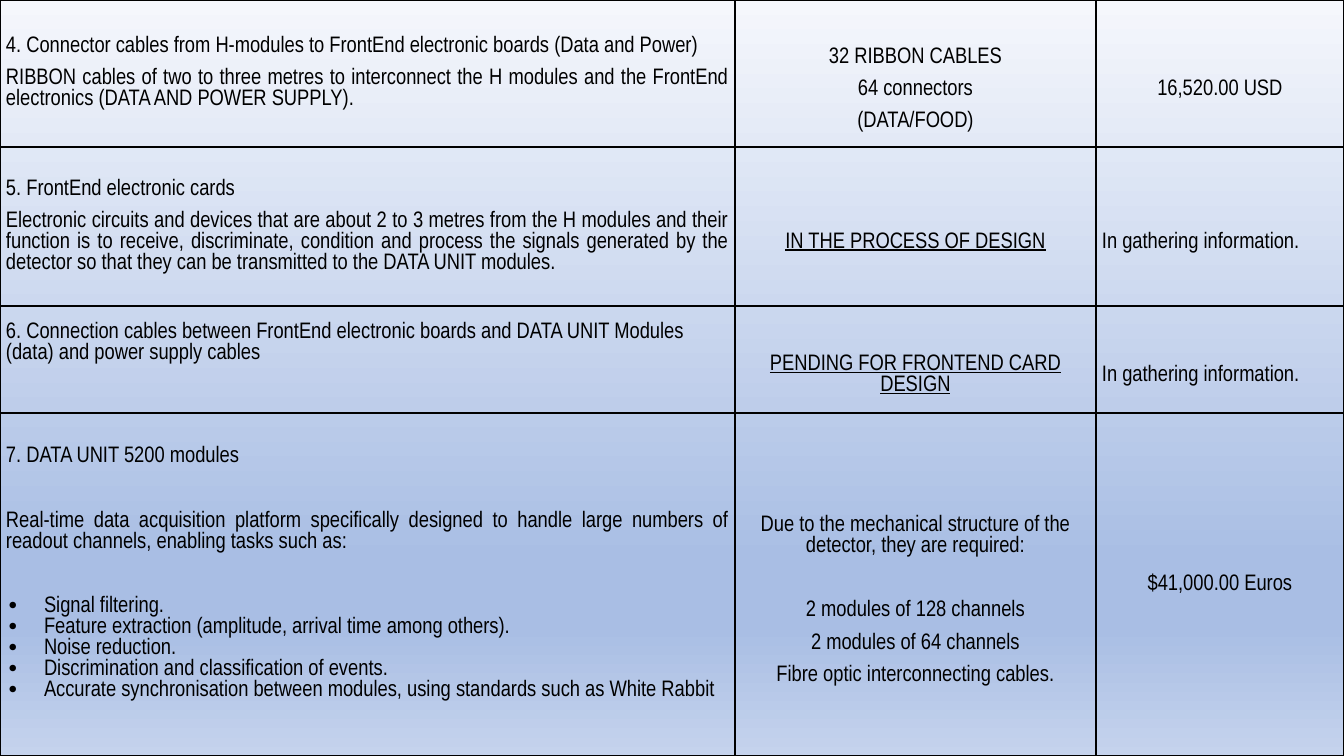
from dataclasses import dataclass, field

from pptx import Presentation
from pptx.dml.color import RGBColor
from pptx.enum.text import MSO_ANCHOR as Anchor, PP_ALIGN as Align
from pptx.oxml import parse_xml
from pptx.oxml.ns import nsdecls
from pptx.util import Emu, Pt

SCALE = 12192000 / 1344
WIDTH, HEIGHT = 1344, 756
COLUMNS = (735, 361, 248)
ROWS = (147, 159, 107, 343)
INSET = 6
LINE = 32
INDENT = 38


@dataclass(frozen=True)
class Theme:
    """Colours and type sizes of the slide."""
    font: str = "Arial Narrow"
    size: int = 16
    ink: str = "000000"
    border: int = 1
    space: int = 8
    gap: int = 31
    gradient: tuple = ((0, "F5F7FC"), (74, "A9BEE4"), (83, "A9BEE4"), (100, "C5D3ED"))


@dataclass
class Entry:
    """Text of one cell with its extra space above and below, in px."""
    paragraphs: list = field(default_factory=list)
    top: int = 0
    bottom: int = 0


THEME = Theme()


def px(length):
    """Turn px into EMU."""
    return Emu(round(length * SCALE))


def line(text, **style):
    """Pair a text with its format."""
    return text, style


def centred(*texts, **style):
    """Make centred paragraphs of one format."""
    return [line(text, align=Align.CENTER, **style) for text in texts]


def bullets(*texts):
    """Make a tight bullet list set off from the paragraph above."""
    return [line(text, bullet=True, before=0 if index else THEME.gap)
            for index, text in enumerate(texts)]


def add_bullet(paragraph):
    """Give a paragraph a hanging dot."""
    properties = paragraph._p.get_or_add_pPr()
    properties.set("marL", str(px(INDENT)))
    properties.set("indent", str(-px(INDENT)))
    for xml in (f'<a:buClr {nsdecls("a")}><a:srgbClr val="{THEME.ink}"/></a:buClr>',
                f'<a:buChar {nsdecls("a")} char="∙"/>'):
        properties.append(parse_xml(xml))


def write(paragraph, text, align=Align.LEFT, before=THEME.space, underline=False, bullet=False):
    """Write one formatted paragraph."""
    if bullet:
        add_bullet(paragraph)
    paragraph.alignment = align
    paragraph.space_before = Pt(before)
    run = paragraph.add_run()
    run.text = text
    run.font.name = THEME.font
    run.font.size = Pt(THEME.size)
    run.font.underline = underline
    run.font.color.rgb = RGBColor.from_string(THEME.ink)


def add_borders(cell):
    """Draw thin lines on all four sides of a cell."""
    properties = cell._tc.get_or_add_tcPr()
    for index, side in enumerate("LRTB"):
        properties.insert(index, parse_xml(
            f'<a:ln{side} {nsdecls("a")} w="{Pt(THEME.border)}"><a:solidFill>'
            f'<a:srgbClr val="{THEME.ink}"/></a:solidFill></a:ln{side}>'))


def fill_cell(cell, entry):
    """Format a cell and write its entry."""
    cell.fill.background()
    add_borders(cell)
    cell.vertical_anchor = Anchor.MIDDLE
    cell.margin_left = cell.margin_right = px(INSET)
    cell.margin_top, cell.margin_bottom = px(entry.top), px(entry.bottom)
    frame = cell.text_frame
    for index, (text, style) in enumerate(entry.paragraphs):
        if index:
            write(frame.add_paragraph(), text, **style)
        else:
            write(frame.paragraphs[0], text, **{**style, "before": 0})


def add_cost_table(slide, entries):
    """Add the table that covers the slide."""
    frame = slide.shapes.add_table(len(ROWS), len(COLUMNS), 0, 0, px(WIDTH), px(HEIGHT))
    table = frame.table
    table.first_row = table.horz_banding = False
    for column, width in zip(table.columns, COLUMNS):
        column.width = px(width)
    for row, height, row_entries in zip(table.rows, ROWS, entries):
        row.height = px(height)
        for cell, entry in zip(row.cells, row_entries):
            fill_cell(cell, entry)


def set_background(slide):
    """Lay a vertical gradient behind the slide."""
    stops = "".join(f'<a:gs pos="{position * 1000}"><a:srgbClr val="{colour}"/></a:gs>'
                    for position, colour in THEME.gradient)
    slide._element.cSld.insert(0, parse_xml(
        f'<p:bg {nsdecls("p", "a")}><p:bgPr><a:gradFill><a:gsLst>{stops}</a:gsLst>'
        '<a:lin ang="5400000" scaled="0"/></a:gradFill><a:effectLst/></p:bgPr></p:bg>'))


def cost_entries():
    """List the entries of the table by row."""
    gathering = Entry([line("In gathering information.")], top=LINE)
    return [
        [Entry([line("4. Connector cables from H-modules to FrontEnd electronic boards "
                     "(Data and Power)", align=Align.JUSTIFY),
                line("RIBBON cables of two to three metres to interconnect the H modules and "
                     "the FrontEnd electronics (DATA AND POWER SUPPLY).", align=Align.JUSTIFY)]),
         Entry(centred("32 RIBBON CABLES", "64 connectors", "(DATA/FOOD)"), top=LINE),
         Entry(centred("16,520.00 USD"), top=LINE)],
        [Entry([line("5. FrontEnd electronic cards"),
                line("Electronic circuits and devices that are about 2 to 3 metres from the H "
                     "modules and their function is to receive, discriminate, condition and "
                     "process the signals generated by the detector so that they can be "
                     "transmitted to the DATA UNIT modules.", align=Align.JUSTIFY)]),
         Entry(centred("IN THE PROCESS OF DESIGN", underline=True), top=LINE),
         gathering],
        [Entry([line("6. Connection cables between FrontEnd electronic boards and DATA UNIT "
                     "Modules (data) and power supply cables")], bottom=LINE),
         Entry(centred("PENDING FOR FRONTEND CARD DESIGN", underline=True), top=LINE),
         gathering],
        [Entry([line("7. DATA UNIT 5200 modules"),
                line("Real-time data acquisition platform specifically designed to handle large "
                     "numbers of readout channels, enabling tasks such as:",
                     align=Align.JUSTIFY, before=THEME.gap),
                *bullets("Signal filtering.",
                         "Feature extraction (amplitude, arrival time among others).",
                         "Noise reduction.",
                         "Discrimination and classification of events.",
                         "Accurate synchronisation between modules, using standards such as "
                         "White Rabbit")], bottom=21),
         Entry([*centred("Due to the mechanical structure of the detector, they are required:"),
                *centred("2 modules of 128 channels", before=THEME.gap),
                *centred("2 modules of 64 channels", "Fibre optic interconnecting cables.")],
               top=LINE),
         Entry(centred("$41,000.00 Euros"), top=LINE, bottom=LINE)],
    ]


def main():
    """Build and save the slide."""
    presentation = Presentation()
    presentation.slide_width, presentation.slide_height = px(WIDTH), px(HEIGHT)
    slide = presentation.slides.add_slide(presentation.slide_layouts[6])
    set_background(slide)
    add_cost_table(slide, cost_entries())
    presentation.save("out.pptx")


if __name__ == "__main__":
    main()
